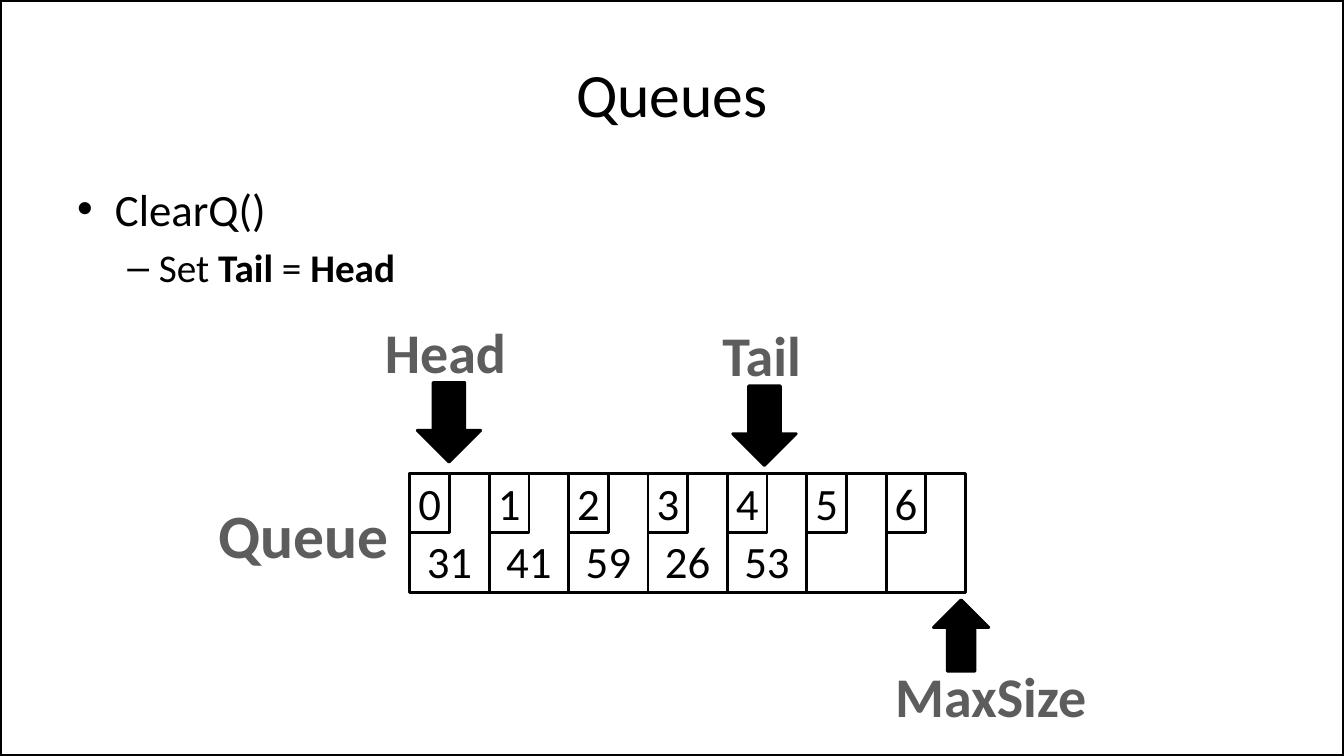
from pptx import Presentation
from pptx.dml.color import RGBColor
from pptx.enum.shapes import MSO_SHAPE
from pptx.enum.text import MSO_ANCHOR, PP_ALIGN
from pptx.oxml.ns import qn
from pptx.util import Pt
from lxml.etree import SubElement

BLACK = RGBColor(0x00, 0x00, 0x00)
GREY = RGBColor(0x5D, 0x5D, 0x5D)

deck = Presentation()
deck.slide_width, deck.slide_height = Pt(960), Pt(540)
slide = deck.slides.add_slide(deck.slide_layouts[6])


def add_run(para, text, size, bold=False, color=BLACK):
    run = para.add_run()
    run.text = text
    run.font.name = "Calibri"
    run.font.size = Pt(size)
    run.font.bold = bold
    run.font.color.rgb = color


def add_box(kind, left, top, width, height, line=2, solid=False):
    box = slide.shapes.add_shape(kind, Pt(left), Pt(top), Pt(width), Pt(height))
    box.shadow.inherit = False
    box.line.color.rgb = BLACK
    box.line.width = Pt(line)
    if solid:
        box.fill.solid()
        box.fill.fore_color.rgb = BLACK
    else:
        box.fill.background()
    return box


add_box(MSO_SHAPE.RECTANGLE, 0, 0, 960, 540, line=3)

title = slide.shapes.add_textbox(Pt(48), Pt(21.6), Pt(864), Pt(90)).text_frame
title.word_wrap = True
title.vertical_anchor = MSO_ANCHOR.MIDDLE
title.paragraphs[0].alignment = PP_ALIGN.CENTER
add_run(title.paragraphs[0], "Queues", 44)

body = slide.shapes.add_textbox(Pt(48), Pt(126), Pt(864), Pt(356.4)).text_frame
body.word_wrap = True
items = [
    (0, "•", 27, 27, 32, [("ClearQ()", False)]),
    (1, "–", 58.5, 22.5, 28,
     [("Set ", False), ("Tail", True), (" = ", False), ("Head", True)]),
]
for level, mark, left, hang, size, parts in items:
    para = body.add_paragraph() if level else body.paragraphs[0]
    para.level = level
    para.space_before = Pt(size * 0.2)
    props = para._p.get_or_add_pPr()
    props.set("marL", str(Pt(left)))
    props.set("indent", str(-Pt(hang)))
    SubElement(props, qn("a:buFont")).set("typeface", "Arial")
    SubElement(props, qn("a:buChar")).set("char", mark)
    for text, bold in parts:
        add_run(para, text, size, bold)

LEFT, TOP, WIDTH, HEIGHT = 292.8, 338, 56.7, 85
values = ["31", "41", "59", "26", "53", "", ""]
for i, value in enumerate(values):
    left = LEFT + i * WIDTH
    cell = add_box(MSO_SHAPE.RECTANGLE, left, TOP, WIDTH, HEIGHT)
    tag = add_box(MSO_SHAPE.RECTANGLE, left, TOP, WIDTH / 2, HEIGHT / 2)
    for box, text, anchor in [(cell, value, MSO_ANCHOR.BOTTOM),
                              (tag, str(i), MSO_ANCHOR.MIDDLE)]:
        if text:
            frame = box.text_frame
            frame.margin_left = frame.margin_right = 0
            frame.margin_top = frame.margin_bottom = Pt(3.5)
            frame.vertical_anchor = anchor
            frame.paragraphs[0].alignment = PP_ALIGN.CENTER
            add_run(frame.paragraphs[0], text, 32)

labels = [
    ("Queue", 148.3, 351.4, 137.5, 60.5, 44),
    ("MaxSize", 631.4, 468.7, 152.6, 55.4, 40),
    ("Head", 267.1, 223.2, 102.2, 55.4, 40),
    ("Tail", 508.3, 225.4, 71.3, 55.4, 40),
]
for text, left, top, width, height, size in labels:
    label = slide.shapes.add_textbox(Pt(left), Pt(top), Pt(width), Pt(height))
    frame = label.text_frame
    frame.word_wrap = False
    frame.paragraphs[0].alignment = PP_ALIGN.CENTER
    add_run(frame.paragraphs[0], text, size, True, GREY)

arrows = [
    (MSO_SHAPE.UP_ARROW, 666.7, 428.4, 39.6, 51.1),
    (MSO_SHAPE.DOWN_ARROW, 298, 273.2, 45.4, 56.9),
    (MSO_SHAPE.DOWN_ARROW, 523.4, 275.6, 45.4, 56.9),
]
for kind, left, top, width, height in arrows:
    add_box(kind, left, top, width, height, solid=True)

deck.save("out.pptx")
